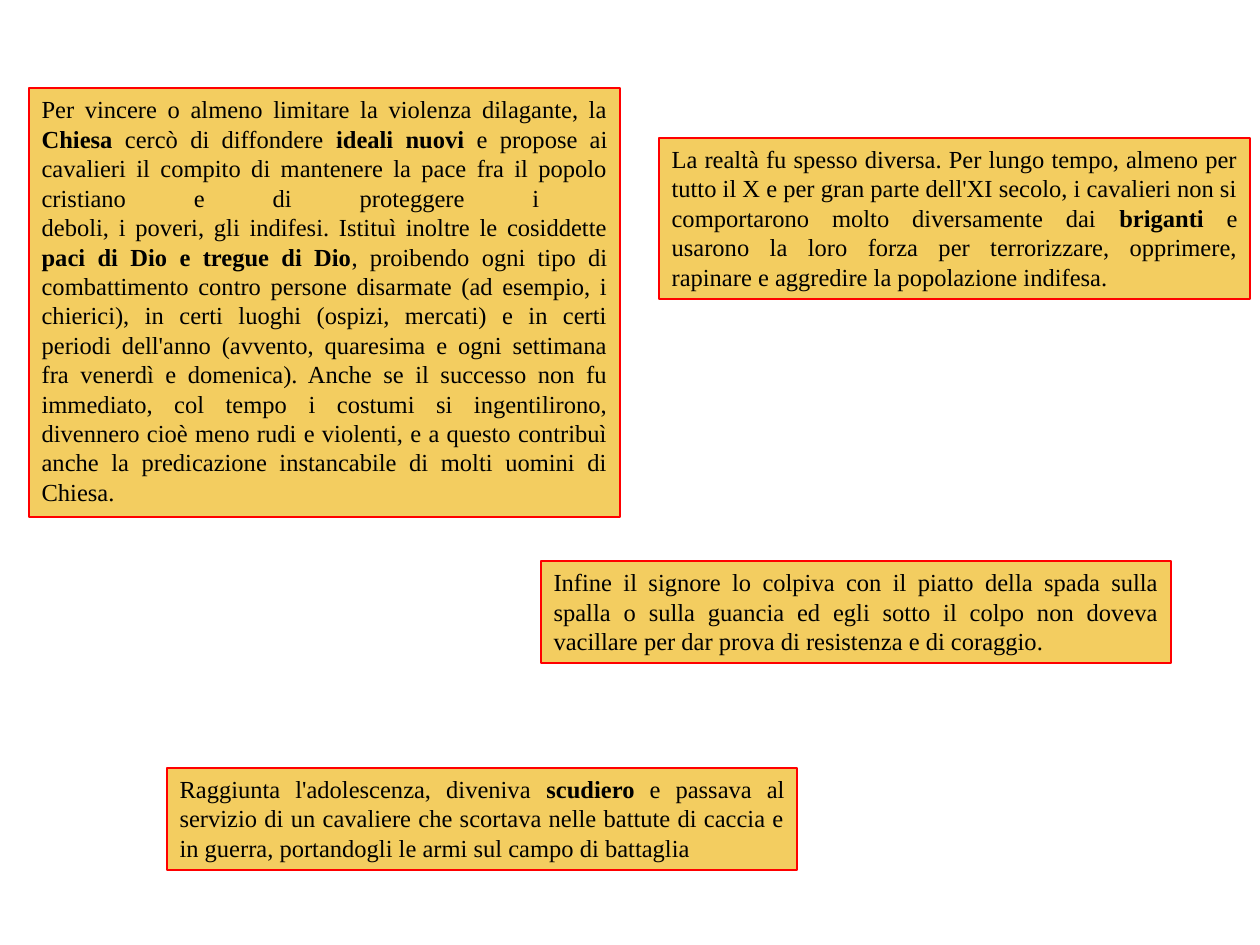
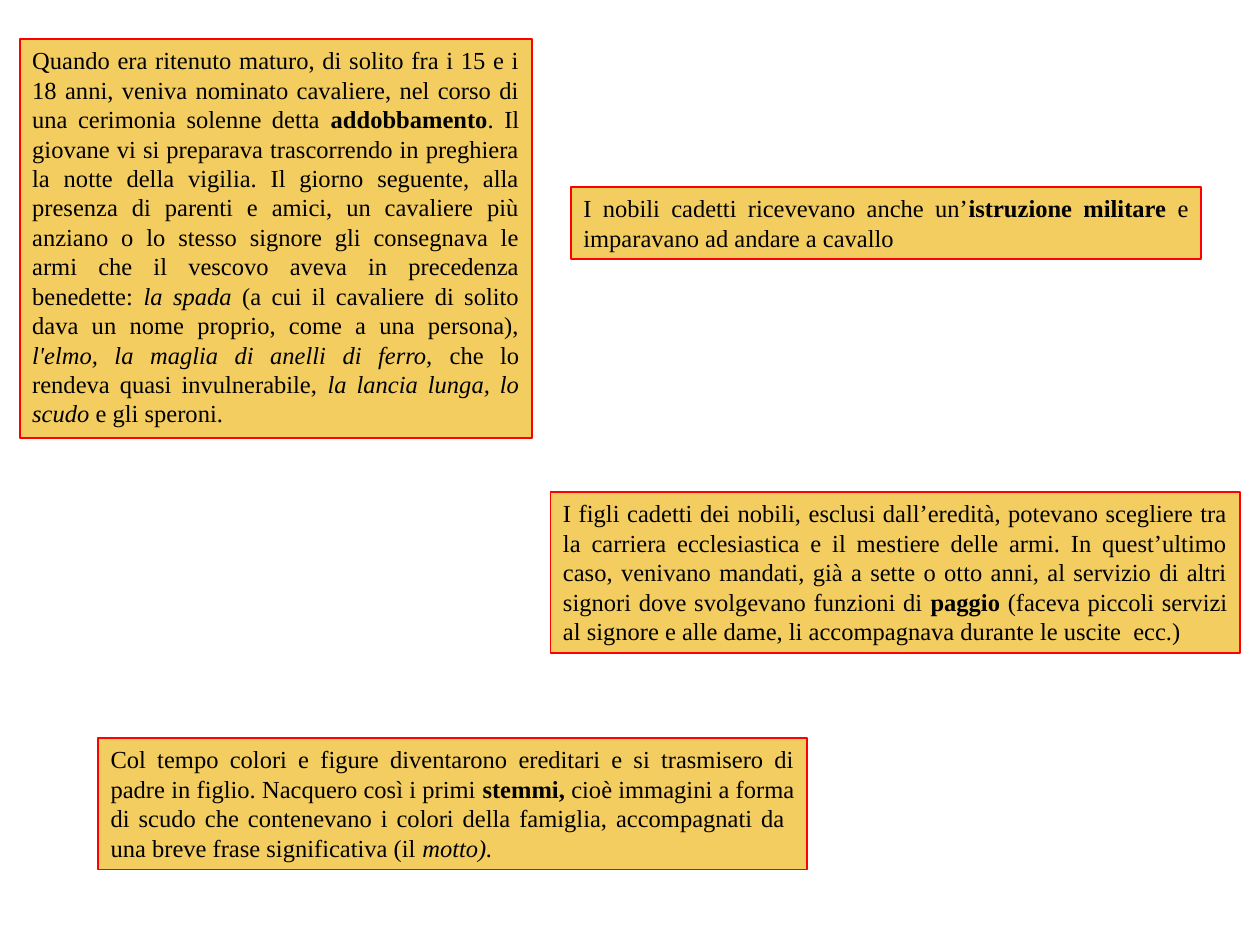
from pptx import Presentation
from pptx.dml.color import RGBColor
from pptx.enum.text import MSO_ANCHOR, MSO_AUTO_SIZE, PP_ALIGN
from pptx.util import Cm, Pt


def color(value):
    return RGBColor.from_string(value)


class KnightDeck:
    font_name = "Times New Roman"
    font_size = Pt(14)
    text_color = "000000"
    fill_color = "F3CD60"
    border_color = "FF0000"

    def __init__(self):
        self.presentation = Presentation()
        self.presentation.slide_width = Cm(25.4)
        self.presentation.slide_height = Cm(19.05)
        self.slide = None

    def add_slide(self):
        blank_layout = self.presentation.slide_layouts[6]
        self.slide = self.presentation.slides.add_slide(blank_layout)

    def add_run(self, paragraph, text, style):
        run = paragraph.add_run()
        run.text = text
        font = run.font
        font.name = self.font_name
        font.size = self.font_size
        font.color.rgb = color(self.text_color)
        font.bold = style == "bold"
        font.italic = style == "italic"

    def add_text_card(self, left, top, width, height, passages):
        shape = self.slide.shapes.add_textbox(Cm(left), Cm(top), Cm(width), Cm(height))
        shape.fill.solid()
        shape.fill.fore_color.rgb = color(self.fill_color)
        shape.line.color.rgb = color(self.border_color)
        shape.line.width = Pt(1)
        frame = shape.text_frame
        frame.word_wrap = True
        frame.auto_size = MSO_AUTO_SIZE.SHAPE_TO_FIT_TEXT
        frame.vertical_anchor = MSO_ANCHOR.TOP
        paragraph = frame.paragraphs[0]
        paragraph.alignment = PP_ALIGN.JUSTIFY
        for text, style in passages:
            for index, line in enumerate(text.split("\n")):
                if index:
                    paragraph.add_line_break()
                self.add_run(paragraph, line, style)

    def save(self):
        self.presentation.save("out.pptx")


SQUIRE = [
    ("Raggiunta l'adolescenza, diveniva ", "plain"),
    ("scudiero ", "bold"),
    ("e passava al servizio di un cavaliere che scortava nelle battute di caccia "
     "e in guerra, portandogli le armi sul campo di battaglia", "plain"),
]
SWORD_BLOW = [
    ("Infine il signore lo colpiva con il piatto della spada sulla spalla o sulla "
     "guancia ed egli sotto il colpo non doveva vacillare per dar prova di "
     "resistenza e di coraggio.", "plain"),
]
BRIGANDS = [
    ("La realtà fu spesso diversa. Per lungo tempo, almeno per tutto il X e per gran "
     "parte dell'XI secolo, i cavalieri non si comportarono molto diversamente dai ",
     "plain"),
    ("briganti", "bold"),
    (" e usarono la loro forza per terrorizzare, opprimere, rapinare e aggredire la "
     "popolazione indifesa.", "plain"),
]
CHURCH = [
    ("Per vincere o almeno limitare la violenza dilagante, la ", "plain"),
    ("Chiesa", "bold"),
    (" cercò di diffondere ", "plain"),
    ("ideali nuovi", "bold"),
    (" e propose ai cavalieri il compito di mantenere la pace fra il popolo cristiano "
     "e di proteggere i \ndeboli, i poveri, gli indifesi. Istituì inoltre le "
     "cosiddette ", "plain"),
    ("paci di Dio e tregue di Dio", "bold"),
    (", proibendo ogni tipo di combattimento contro persone disarmate (ad esempio, i "
     "chierici), in certi luoghi (ospizi, mercati) e in certi periodi dell'anno "
     "(avvento, quaresima e ogni settimana fra venerdì e domenica). Anche se il "
     "successo non fu immediato, col tempo i costumi si ingentilirono, divennero cioè "
     "meno rudi e violenti, e a questo contribuì anche la predicazione instancabile "
     "di molti uomini di Chiesa.", "plain"),
]
DUBBING = [
    ("Quando era ritenuto maturo, di solito fra i 15 e i 18 anni, veniva nominato "
     "cavaliere, nel corso di una cerimonia solenne detta ", "plain"),
    ("addobbamento", "bold"),
    (". Il giovane vi si preparava trascorrendo in preghiera la notte della vigilia. "
     "Il giorno seguente, alla presenza di parenti e amici, un cavaliere più anziano "
     "o lo stesso signore gli consegnava le armi che il vescovo aveva in precedenza "
     "benedette: ", "plain"),
    ("la spada ", "italic"),
    ("(a cui il cavaliere di solito dava un nome proprio, come a una persona), ",
     "plain"),
    ("l'elmo, la maglia di anelli di ferro, ", "italic"),
    ("che lo rendeva quasi invulnerabile, ", "plain"),
    ("la lancia lunga, lo scudo ", "italic"),
    ("e gli speroni. ", "plain"),
]
COATS_OF_ARMS = [
    ("Col tempo colori e figure diventarono ereditari e si trasmisero di padre in "
     "figlio. Nacquero così i primi ", "plain"),
    ("stemmi, ", "bold"),
    ("cioè immagini a forma di scudo che contenevano i colori della famiglia, "
     "accompagnati da \nuna breve frase significativa (il ", "plain"),
    ("motto).", "italic"),
]
PAGE = [
    ("I figli cadetti dei nobili, esclusi dall’eredità, potevano scegliere tra la "
     "carriera ecclesiastica e il mestiere delle armi. In quest’ultimo caso, venivano "
     "mandati, già a sette o otto anni, al servizio di altri signori dove svolgevano "
     "funzioni di ", "plain"),
    ("paggio ", "bold"),
    ("(faceva piccoli servizi al signore e alle dame, li accompagnava durante le "
     "uscite  ecc.) ", "plain"),
]
MILITARY_TRAINING = [
    ("I nobili cadetti ricevevano anche un’", "plain"),
    ("istruzione militare ", "bold"),
    ("e imparavano ad andare a cavallo", "plain"),
]

SLIDES = [
    [
        (3.37, 15.48, 12.7, 2.06, SQUIRE),
        (10.91, 11.31, 12.7, 2.06, SWORD_BLOW),
        (13.29, 2.78, 11.91, 3.25, BRIGANDS),
        (0.59, 1.78, 11.91, 8.64, CHURCH),
    ],
    [
        (0.4, 0.79, 10.32, 8.04, DUBBING),
        (1.98, 14.88, 14.29, 2.65, COATS_OF_ARMS),
        (11.1, 9.92, 13.9, 3.25, PAGE),
        (11.51, 3.77, 12.7, 1.45, MILITARY_TRAINING),
    ],
]


def main():
    deck = KnightDeck()
    for cards in SLIDES:
        deck.add_slide()
        for card in cards:
            deck.add_text_card(*card)
    deck.save()


if __name__ == "__main__":
    main()
